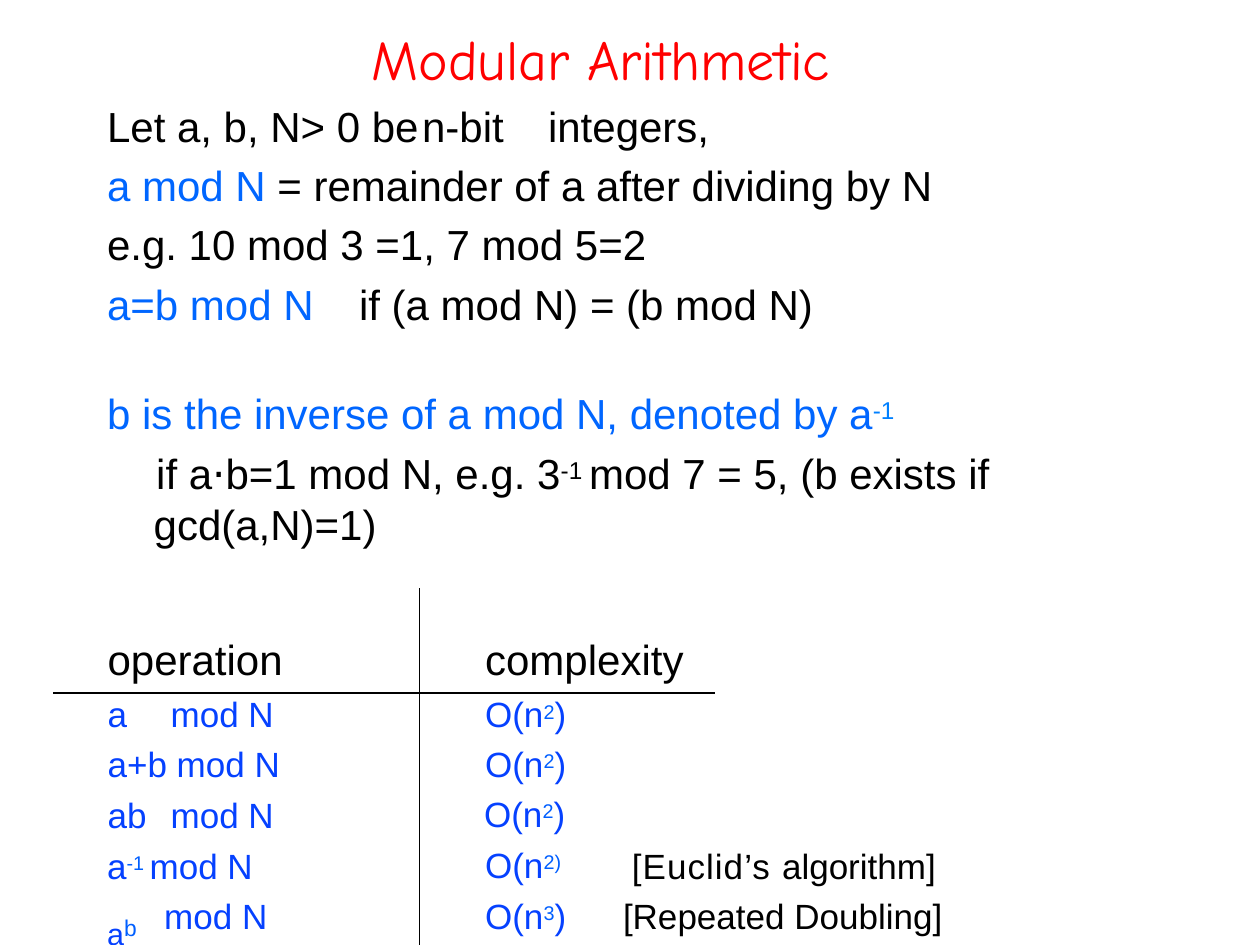
from pptx import Presentation
from pptx import util as u
from pptx.dml import color
from pptx.enum import shapes, text
from lxml import etree

NS = "{http://schemas.openxmlformats.org/drawingml/2006/main}"
BLACK, RED, SKY, AZURE = "000000", "FF0000", "0066FF", "0080FF"
BLUE, POWER = "0541FF", "005FFF"


def rgb(hex_value):
    return color.RGBColor.from_string(hex_value)


def run(words, tint=BLACK, size=24, raised=0, spacing=0, face="Arial"):
    return dict(words=words, tint=tint, size=size, raised=raised,
                spacing=spacing, face=face)


def line(*runs, left=0.03, first=0, before=0, leading=None, tabs=()):
    return dict(runs=runs, left=left, first=first, before=before,
                leading=leading, tabs=tabs)


def add_run(paragraph, words, tint, size, raised, spacing, face):
    piece = paragraph.add_run()
    piece.text = words
    piece.font.name = face
    piece.font.size = u.Pt(size)
    piece.font.color.rgb = rgb(tint)
    props = piece.font._element
    if raised:
        props.set("baseline", str(raised * 1000))
    if spacing:
        props.set("spc", str(round(spacing * 100)))


def add_text(slide, box, lines, inset=0.03):
    frame = slide.shapes.add_textbox(*map(u.Cm, box)).text_frame
    frame.word_wrap = True
    frame.margin_left = frame.margin_right = frame.margin_bottom = 0
    frame.margin_top = u.Cm(inset)
    frame.vertical_anchor = text.MSO_ANCHOR.TOP
    for index, item in enumerate(lines):
        paragraph = frame.add_paragraph() if index else frame.paragraphs[0]
        paragraph.space_before = u.Pt(item["before"])
        if item["leading"]:
            paragraph.line_spacing = item["leading"]
        props = paragraph._p.get_or_add_pPr()
        props.set("marL", str(u.Cm(item["left"])))
        props.set("indent", str(u.Cm(item["first"])))
        if item["tabs"]:
            stops = etree.SubElement(props, NS + "tabLst")
            for stop in item["tabs"]:
                etree.SubElement(stops, NS + "tab", pos=str(u.Cm(stop)), algn="l")
        for piece in item["runs"]:
            add_run(paragraph, **piece)


def add_rule(slide, x1, y1, x2, y2):
    rule = slide.shapes.add_connector(
        shapes.MSO_CONNECTOR.STRAIGHT, *map(u.Cm, (x1, y1, x2, y2)))
    rule.line.color.rgb = rgb(BLACK)
    rule.line.width = u.Pt(0.75)
    etree.SubElement(rule._element.spPr, NS + "effectLst")


def add_title(slide, box):
    heading = run("Modular Arithmetic", RED, 32, spacing=-0.1, face="Comic Neue")
    add_text(slide, box, [line(heading, before=1)])


def add_definitions(slide, box):
    stops = (7.14, 9.58)
    add_text(slide, box, [
        line(run("Let a, b, N> 0 be\tn-bit\tintegers,"),
             left=0.15, before=6, tabs=stops),
        line(run("a mod N ", SKY), run("= remainder of a after dividing by N"),
             left=0.15, before=5),
        line(run("e.g. 10 mod 3 =1, 7 mod 5=2"), left=0.15, before=5),
        line(run("a=b mod N\t", SKY), run("if (a mod N) = (b mod N)"),
             left=0.15, before=5, tabs=stops),
        line(run("b is the inverse of a mod N, denoted by a", SKY),
             run("-1", AZURE, raised=24), left=0.15, before=34),
        line(run("if a⋅b=1 mod N, e.g. 3"), run("-1 ", raised=24),
             run("mod 7 = 5, (b exists if gcd(a,N)=1)"),
             left=1.09, first=0.05, before=4.8, leading=1.01),
    ], inset=0.2)


def operation(words):
    return run(words, BLUE, 20)


def order(exponent, close=")", **layout):
    runs = [operation("O(n"), run(exponent, POWER, 19.5, raised=26)]
    if close:
        runs.append(operation(close))
    return line(*runs, **{"left": 0.12, "before": 5, **layout})


def add_complexities(slide, box):
    left, top, width, height = box

    def place(x, y, w, h, lines, inset=0.03):
        add_text(slide, (left + x, top + y, w, h), lines, inset)

    place(1.07, 0.66, 3.81, 2.34, [
        line(run("operation"), before=7.2),
        line(operation("a\tmod N"), before=5.2, tabs=(0.81,)),
    ], inset=0.25)
    place(8.61, 0.66, 4.47, 2.34, [
        line(run("complexity"), left=0.1, before=7.2),
        order("2", left=0.1, before=5.2),
    ], inset=0.25)
    place(1.07, 2.9, 3.76, 2.01, [
        line(operation("a+b mod N"), before=1, leading=1.21),
        line(operation("ab\tmod N"), leading=1.21, tabs=(1.63,)),
    ])
    place(0.99, 5.13, 3.3, 0.91, [
        line(operation("a"), run("-1 ", POWER, 19.5, raised=26),
             operation("mod N"), left=0.1, before=1),
    ])
    place(0.99, 5.94, 0.86, 0.91, [
        line(run("a", BLUE, 30, raised=-17), run("b", POWER, 13),
             left=0.1, before=1),
    ])
    place(2.21, 6.15, 2.18, 0.91, [line(operation("mod N"), before=1)])
    place(8.59, 2.9, 1.96, 4.17, [
        order("2", before=6), order("2", left=0.1),
        order("2)", close=""), order("3"),
    ], inset=0.2)
    place(11.46, 4.95, 6.78, 2.01, [
        line(run("[Euclid’s ", size=20, spacing=0.6), run("algorithm]", size=20),
             first=0.18, before=1, leading=1.21),
        line(run("[Repeated Doubling]", size=20), leading=1.21),
    ])
    add_rule(slide, left, top + 2.11, left + width, top + 2.11)
    add_rule(slide, left + 7.39, top, left + 7.39, top + height)


def main():
    deck = Presentation()
    deck.slide_width, deck.slide_height = u.Cm(25.4), u.Cm(19.05)
    slide = deck.slides.add_slide(deck.slide_layouts[6])
    add_title(slide, (7.47, 0.46, 10.46, 1.42))
    add_definitions(slide, (2.01, 1.83, 21.69, 9.32))
    add_complexities(slide, (1.07, 11.86, 13.34, 7.19))
    deck.save("out.pptx")


if __name__ == "__main__":
    main()
